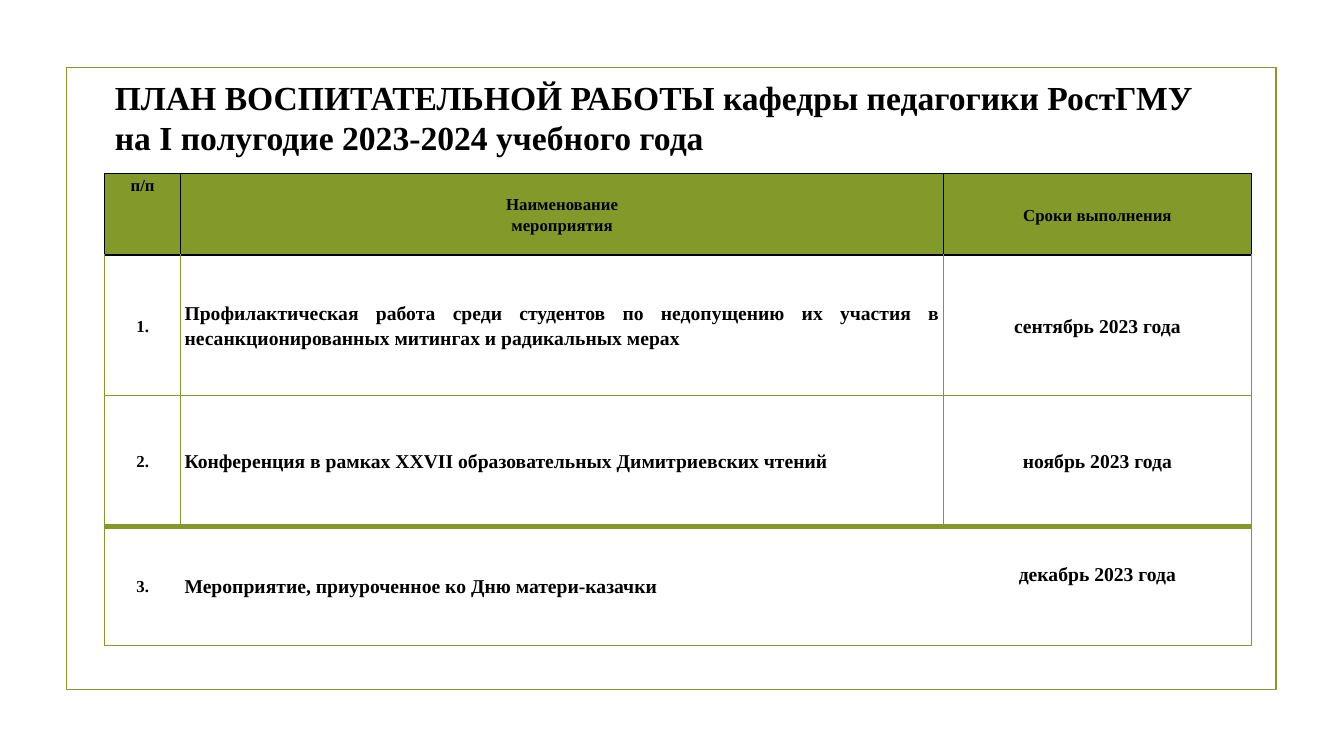
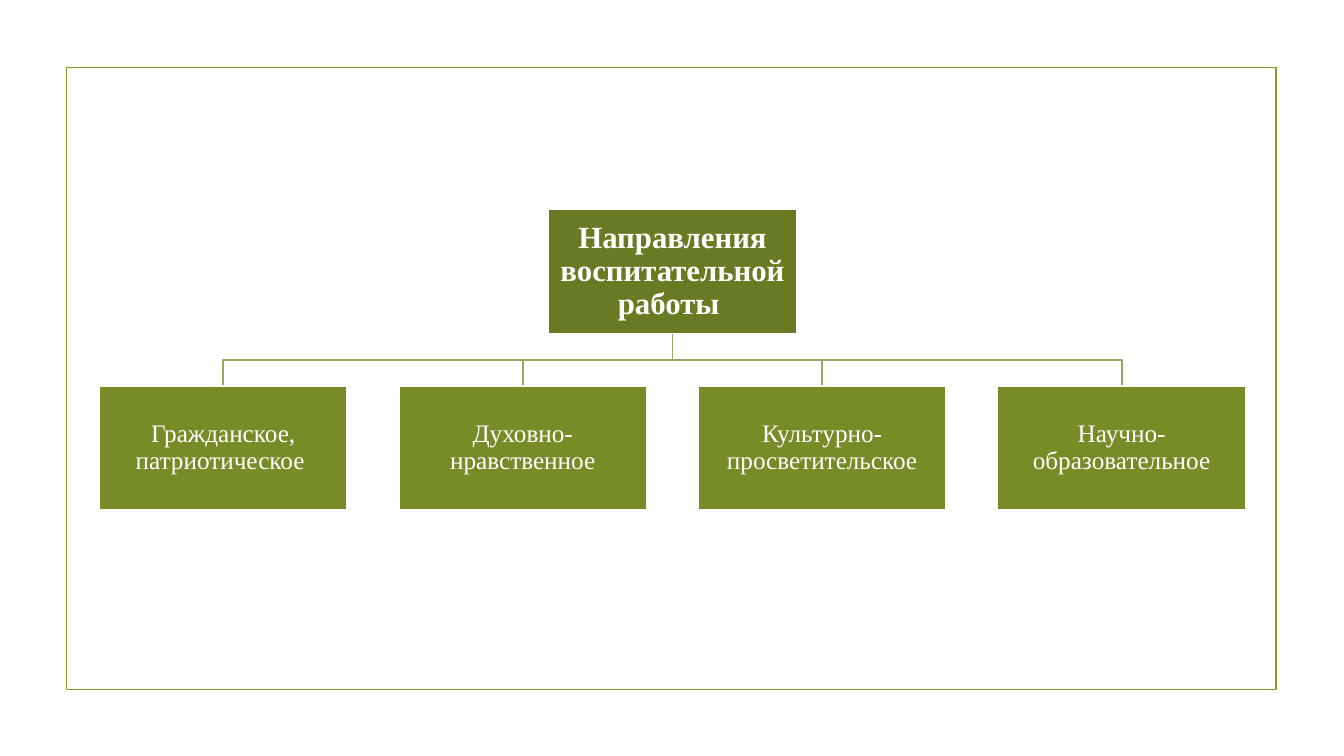
from lxml import etree
from pptx import Presentation
from pptx.dml.color import RGBColor
from pptx.enum.shapes import MSO_SHAPE as Shape
from pptx.enum.text import MSO_ANCHOR as Anchor, PP_ALIGN as Align
from pptx.oxml.ns import qn
from pptx.util import Inches, Pt

COLORS = {
    "text": "000000",
    "white": "FFFFFF",
    "olive": "83992A",
    "root": "697B22",
    "branch": "778B26",
    "link": "96A763",
}
FONT = "Times New Roman"
PLAIN_TABLE = "{2D5ABB26-0587-4C30-8999-92F81FD0307C}"

TITLE = ("ПЛАН ВОСПИТАТЕЛЬНОЙ РАБОТЫ кафедры педагогики РостГМУ "
         "на I полугодие 2023-2024 учебного года")
HEADINGS = ["п/п", "Наименование\nмероприятия", "Сроки выполнения"]
EVENTS = [
    ["1.", "Профилактическая работа среди студентов по недопущению их участия "
     "в несанкционированных митингах и радикальных мерах", "сентябрь 2023 года"],
    ["2.", "Конференция в рамках XXVII образовательных Димитриевских чтений",
     "ноябрь 2023 года"],
    ["3.", "Мероприятие, приуроченное ко Дню матери-казачки",
     "декабрь 2023 года"],
]
COLUMN_WIDTHS = [0.75, 7.57, 3.05]
ROW_HEIGHTS = [0.81, 1.39, 1.3, 1.18]

ROOT = "Направления воспитательной работы "
BRANCHES = ["Гражданское, патриотическое ", "Духовно-нравственное",
            "Культурно-просветительское", "Научно-образовательное"]
CENTER_X, BOX_W, BOX_H, PITCH = 6.67, 2.46, 1.23, 2.97
ROOT_TOP, BRANCH_TOP = 2.08, 3.83


def rgb(name):
    return RGBColor.from_string(COLORS[name])


def set_all(target, values):
    for attribute, value in values.items():
        setattr(target, attribute, value)


def write(frame, text, size, color="text", bold=False, align=Align.LEFT,
          spacing=1.0, **frame_format):
    """Fill a text frame, one paragraph per line of text."""
    set_all(frame, {"word_wrap": True, **frame_format})
    frame.text = text
    for paragraph in frame.paragraphs:
        set_all(paragraph, {"alignment": align, "line_spacing": spacing})
        set_all(paragraph.font, {"name": FONT, "size": Pt(size), "bold": bold})
        paragraph.font.color.rgb = rgb(color)


def margins(inches):
    sides = ("left", "top", "right", "bottom")
    return {f"margin_{side}": Inches(inches) for side in sides}


def add_box(slide, left, top, width, height, line, fill=None):
    box = slide.shapes.add_shape(Shape.RECTANGLE, Inches(left), Inches(top),
                                 Inches(width), Inches(height))
    box.shadow.inherit = False
    box.line.color.rgb = rgb(line)
    box.line.width = Pt(1.25)
    if fill:
        box.fill.solid()
        box.fill.fore_color.rgb = rgb(fill)
    else:
        box.fill.background()
    return box


def add_framed_slide(deck):
    slide = deck.slides.add_slide(deck.slide_layouts[6])
    add_box(slide, 0.66, 0.67, 12, 6.17, "olive")
    return slide


# Plan table
def set_borders(cell, borders):
    properties = cell._tc.get_or_add_tcPr()
    for side in "LRTB":
        if side not in borders:
            continue
        color, width = borders[side]
        edge = etree.SubElement(properties, qn(f"a:ln{side}"), w=str(Pt(width)))
        fill = etree.SubElement(edge, qn("a:solidFill"))
        etree.SubElement(fill, qn("a:srgbClr"), val=COLORS[color])


def cell_borders(row, column):
    header, thin, heavy = ("text", 1), ("olive", 0.75), ("olive", 4)
    if row == 0:
        return dict.fromkeys("LRTB", header)
    last_row = row == len(EVENTS)
    borders = {
        "T": header if row == 1 else heavy if last_row else thin,
        "B": heavy if row == len(EVENTS) - 1 else thin,
    }
    # The last row has no inner vertical lines
    if column == 0 or not last_row:
        borders["L"] = thin
    if column == len(HEADINGS) - 1 or not last_row:
        borders["R"] = thin
    return borders


def format_cell(cell, text, row, column):
    set_borders(cell, cell_borders(row, column))
    if row == 0:
        cell.fill.solid()
        cell.fill.fore_color.rgb = rgb("olive")
    else:
        cell.fill.background()
    is_event = row > 0 and column > 0
    write(cell.text_frame, text, 14 if is_event else 12, bold=True, spacing=1.15,
          align=Align.JUSTIFY if is_event and column == 1 else Align.CENTER)
    raised = row == len(EVENTS) and column == 2
    set_all(cell, {
        "margin_left": Inches(0.04), "margin_right": Inches(0.04),
        "margin_top": 0, "margin_bottom": Inches(0.24 if raised else 0),
        "vertical_anchor": Anchor.TOP if row == column == 0 else Anchor.MIDDLE,
    })


def add_plan_table(slide):
    rows = [HEADINGS, *EVENTS]
    plan = slide.shapes.add_table(
        len(rows), len(HEADINGS), Inches(1.04), Inches(1.72),
        Inches(sum(COLUMN_WIDTHS)), Inches(sum(ROW_HEIGHTS))).table
    set_all(plan, {"first_row": False, "horz_banding": False})
    plan._tbl.tblPr.find(qn("a:tableStyleId")).text = PLAIN_TABLE
    for column, width in zip(plan.columns, COLUMN_WIDTHS):
        column.width = Inches(width)
    for row, height in zip(plan.rows, ROW_HEIGHTS):
        row.height = Inches(height)
    for r, texts in enumerate(rows):
        for c, text in enumerate(texts):
            format_cell(plan.cell(r, c), text, r, c)


def build_plan(deck):
    slide = add_framed_slide(deck)
    title = slide.shapes.add_textbox(Inches(1.04), Inches(0.71),
                                     Inches(11.25), Inches(0.91))
    write(title.text_frame, TITLE, 24, bold=True)
    add_plan_table(slide)


# Diagram of directions
def add_link(slide, branch_x):
    start, end = ROOT_TOP + BOX_H, BRANCH_TOP
    bend = (start + end) / 2
    outline = slide.shapes.build_freeform(Inches(CENTER_X), Inches(start))
    outline.add_line_segments(
        [(Inches(x), Inches(y)) for x, y in
         ((CENTER_X, bend), (branch_x, bend), (branch_x, end))], close=False)
    link = outline.convert_to_shape()
    link.shadow.inherit = False
    link.fill.background()
    link.line.color.rgb = rgb("link")
    link.line.width = Pt(1.25)


def add_node(slide, text, center_x, top, fill, size, bold=False):
    node = add_box(slide, center_x - BOX_W / 2, top, BOX_W, BOX_H, "white", fill)
    write(node.text_frame, text, size, "white", bold, Align.CENTER, 0.9,
          vertical_anchor=Anchor.MIDDLE, **margins(0.05))


def build_directions(deck):
    slide = add_framed_slide(deck)
    middle = (len(BRANCHES) - 1) / 2
    centers = [CENTER_X + (i - middle) * PITCH for i in range(len(BRANCHES))]
    for center in reversed(centers):
        add_link(slide, center)
    add_node(slide, ROOT, CENTER_X, ROOT_TOP, "root", 22, bold=True)
    for text, center in zip(BRANCHES, centers):
        add_node(slide, text, center, BRANCH_TOP, "branch", 18)


def main():
    deck = Presentation()
    set_all(deck, {"slide_width": Inches(13.33), "slide_height": Inches(7.5)})
    build_plan(deck)
    build_directions(deck)
    deck.save("out.pptx")


if __name__ == "__main__":
    main()
